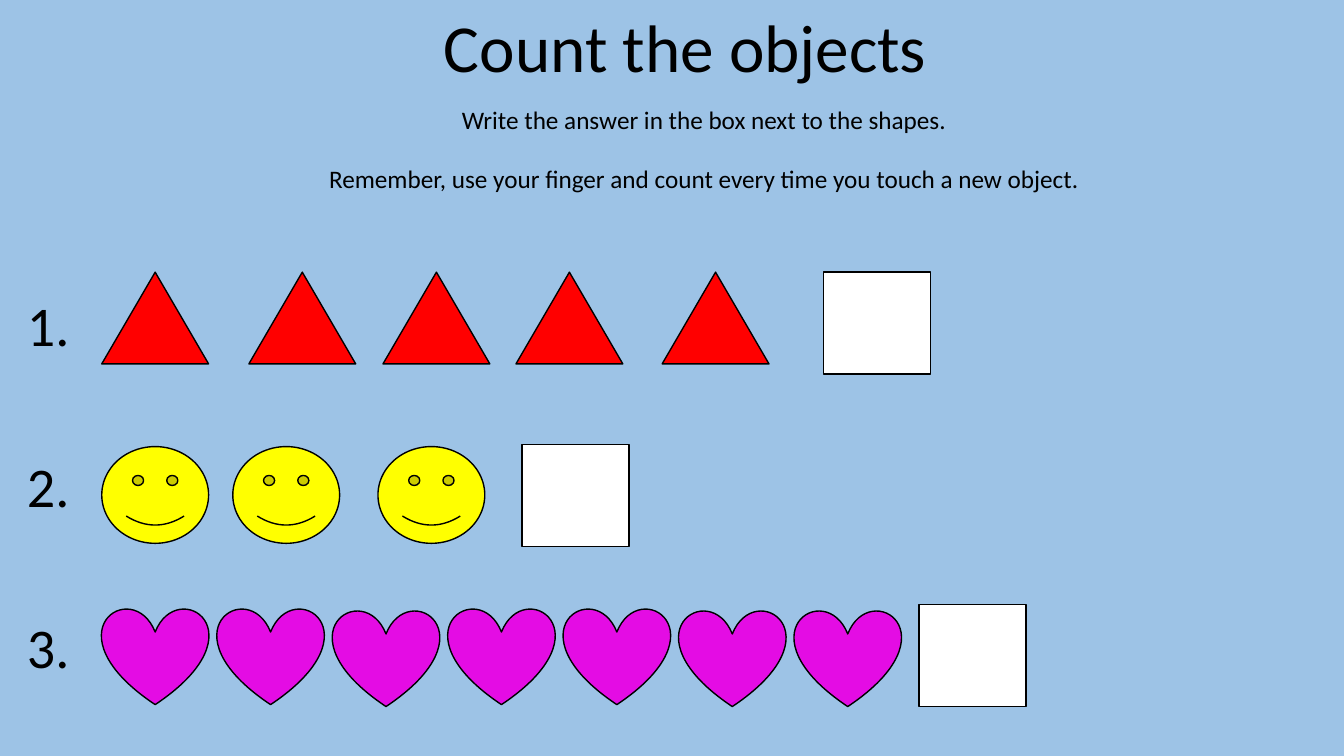
from dataclasses import dataclass

from pptx import Presentation
from pptx import util as u
from pptx.dml.color import RGBColor
from pptx.enum import shapes, text

Pt = u.Pt
Kind = shapes.MSO_SHAPE


@dataclass(frozen=True)
class Theme:
    """Colours, font and type sizes of the slide."""
    sky: str = "9DC3E6"
    ink: str = "000000"
    white: str = "FFFFFF"
    red: str = "FF0000"
    yellow: str = "FFFF00"
    pink: str = "E40CE4"
    font: str = "Calibri"
    title: int = 48
    label: int = 40
    body: int = 18


THEME = Theme()
WIDTH = 76.3   # every object and answer box
LEFT = 72.7    # first object of each row


def rgb(code):
    """Turn a hex code into a colour."""
    return RGBColor.from_string(code)


def place(item, box):
    """Set left, top, width and height in points."""
    item.left, item.top, item.width, item.height = map(Pt, box)


def write(item, lines, size, align, gap=0):
    """Fill a text holder, one paragraph per line."""
    frame = item.text_frame
    frame.word_wrap = True
    frame.auto_size = text.MSO_AUTO_SIZE.NONE
    frame.vertical_anchor = text.MSO_ANCHOR.TOP
    for i, line in enumerate(lines):
        para = frame.add_paragraph() if i else frame.paragraphs[0]
        para.alignment = align
        para.space_before = Pt(gap if i else 0)
        run = para.add_run()
        run.text = line
        run.font.name = THEME.font
        run.font.size = Pt(size)
        run.font.color.rgb = rgb(THEME.ink)


def add_text(slide, box, lines, size, align, gap=0):
    """Add a text box."""
    item = slide.shapes.add_textbox(*map(Pt, box))
    write(item, lines, size, align, gap)


def add_shape(slide, kind, box, fill):
    """Add a filled shape with a thin dark outline."""
    item = slide.shapes.add_shape(kind, *map(Pt, box))
    item.shadow.inherit = False
    item.fill.solid()
    item.fill.fore_color.rgb = rgb(fill)
    item.line.color.rgb = rgb(THEME.ink)
    item.line.width = Pt(1)


def add_row(slide, label, top, kind, fill, height, spots, answer):
    """Add a numbered row: label, objects to count, answer box."""
    add_text(slide, (12.2, top, 60.5, 55.4), [label], THEME.label,
             text.PP_ALIGN.LEFT)
    for x, y in spots:
        add_shape(slide, kind, (x, y, WIDTH, height), fill)
    add_shape(slide, Kind.RECTANGLE, (*answer, WIDTH, 72.7), THEME.white)


def main():
    """Build and save the counting slide."""
    deck = Presentation()
    deck.slide_width, deck.slide_height = Pt(960), Pt(540)
    slide = deck.slides.add_slide(deck.slide_layouts[5])
    slide.background.fill.solid()
    slide.background.fill.fore_color.rgb = rgb(THEME.sky)

    mid = text.PP_ALIGN.CENTER
    title = slide.shapes.title
    place(title, (88.6, 0, 802, 65.5))
    write(title, ["Count the objects"], THEME.title, mid)
    add_text(slide, (176.4, 70.6, 653, 72.7), [
        "Write the answer in the box next to the shapes.",
        "Remember, use your finger and count every time you touch "
        "a new object.",
    ], THEME.body, mid, gap=21)

    cones = [(x, 194.4) for x in (LEFT, 177.8, 273.6, 368.6, 473)]
    faces = [(x, 319) for x in (LEFT, 166.3, 270)]
    drops = (0, 0, 1.4, 0, 0, 1.4, 1.4)
    hearts = [(LEFT + 82.45 * i, 434.2 + drop)
              for i, drop in enumerate(drops)]
    rows = [
        ("1.", 203.8, Kind.ISOSCELES_TRIANGLE, THEME.red, 65.5,
         cones, (588.2, 194.4)),
        ("2.", 319, Kind.SMILEY_FACE, THEME.yellow, 69.1,
         faces, (373, 317.5)),
        ("3.", 434.2, Kind.HEART, THEME.pink, 69.1,
         hearts, (656.6, 432)),
    ]
    for row in rows:
        add_row(slide, *row)
    deck.save("out.pptx")


main()
